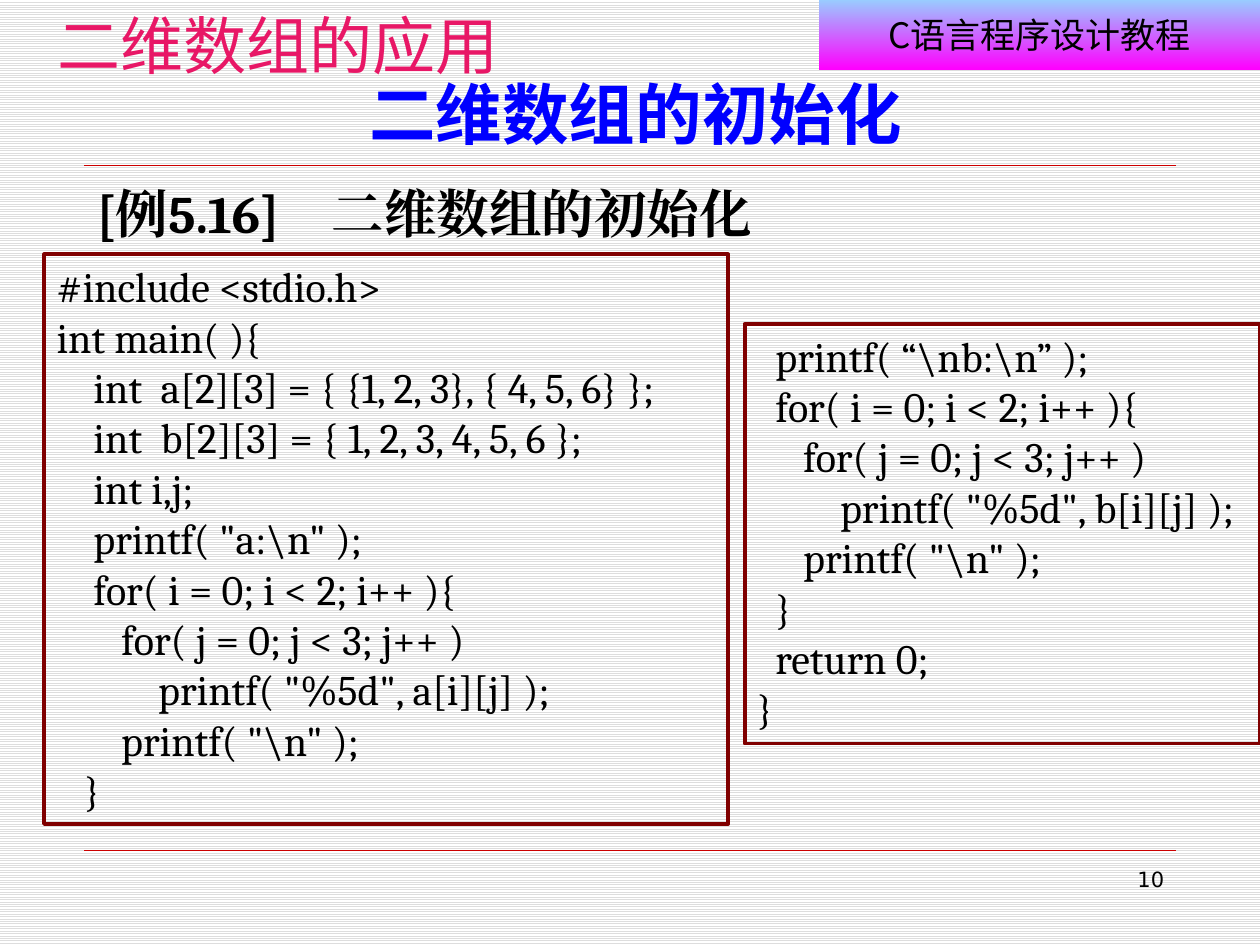
from dataclasses import dataclass

from lxml import etree
from pptx import Presentation
from pptx import util as u
from pptx.dml import color
from pptx.enum import dml, shapes, text
from pptx.oxml import ns


@dataclass(frozen=True)
class Area:
    left: float
    top: float
    width: float
    height: float

    def lengths(self) -> tuple:
        return tuple(u.Cm(n) for n in (self.left, self.top, self.width, self.height))


@dataclass(frozen=True)
class Style:
    font: str
    size: float
    color: str = "000000"
    bold: bool = False
    align: text.PP_ALIGN = text.PP_ALIGN.LEFT
    anchor: text.MSO_ANCHOR = text.MSO_ANCHOR.TOP
    wrap: bool = True


@dataclass(frozen=True)
class Listing:
    area: Area
    code: str


CODE_STYLE = Style("Cambria", 24)
RULE_TOPS = (3.33, 17.15)

LISTINGS = (
    Listing(Area(15.01, 6.53, 10.39, 8.46), r'''  printf( “\nb:\n” );
  for( i = 0; i < 2; i++ ){
     for( j = 0; j < 3; j++ )
         printf( "%5d", b[i][j] );
     printf( "\n" );
  }
  return 0;
}'''),
    Listing(Area(0.89, 5.13, 13.79, 11.48), r'''#include <stdio.h>
int main( ){
    int  a[2][3] = { {1, 2, 3}, { 4, 5, 6} };
    int  b[2][3] = { 1, 2, 3, 4, 5, 6 };
    int i,j;
    printf( "a:\n" );
    for( i = 0; i < 2; i++ ){
       for( j = 0; j < 3; j++ )
           printf( "%5d", a[i][j] );
       printf( "\n" );
   }'''),
)


def rgb(value: str) -> color.RGBColor:
    return color.RGBColor.from_string(value)


def write(shape, content: str, style: Style) -> None:
    frame = shape.text_frame
    frame.word_wrap = style.wrap
    frame.vertical_anchor = style.anchor
    frame.auto_size = text.MSO_AUTO_SIZE.NONE
    for index, line in enumerate(content.split("\n")):
        paragraph = frame.add_paragraph() if index else frame.paragraphs[0]
        paragraph.alignment = style.align
        run = paragraph.add_run()
        run.text = line
        font = run.font
        font.name = style.font
        font.size = u.Pt(style.size)
        font.bold = style.bold
        font.color.rgb = rgb(style.color)
        east_asian = etree.Element(ns.qn("a:ea"), typeface=style.font)
        run.font.element.find(ns.qn("a:latin")).addnext(east_asian) if hasattr(
            run.font, "element"
        ) else run._r.get_or_add_rPr().append(east_asian)


def add_text(slide, area: Area, content: str, style: Style) -> None:
    write(slide.shapes.add_textbox(*area.lengths()), content, style)


def add_rule(slide, top: float) -> None:
    rule = slide.shapes.add_connector(
        shapes.MSO_CONNECTOR.STRAIGHT, u.Cm(1.7), u.Cm(top), u.Cm(23.7), u.Cm(top)
    )
    rule.line.color.rgb = rgb("CC0000")
    rule.line.width = u.Pt(0.25)
    etree.SubElement(rule._element.spPr, ns.qn("a:effectLst"))


def add_rectangle(slide, area: Area):
    rectangle = slide.shapes.add_shape(shapes.MSO_SHAPE.RECTANGLE, *area.lengths())
    rectangle.shadow.inherit = False
    return rectangle


def add_banner(slide) -> None:
    banner = add_rectangle(slide, Area(16.51, 0, 8.89, 1.4))
    banner.line.fill.background()
    banner.fill.gradient()
    banner.fill.gradient_angle = 270
    for stop, value in zip(banner.fill.gradient_stops, ("99CCFF", "FF00FF")):
        stop.color.rgb = rgb(value)
    write(banner, "C语言程序设计教程", Style(
        "Noto Sans CJK SC", 20, align=text.PP_ALIGN.CENTER, anchor=text.MSO_ANCHOR.MIDDLE
    ))


def add_listing(slide, listing: Listing) -> None:
    frame = add_rectangle(slide, listing.area)
    frame.fill.background()
    frame.line.color.rgb = rgb("800000")
    frame.line.width = u.Pt(2.25)
    write(frame, listing.code, CODE_STYLE)


def main() -> None:
    deck = Presentation()
    deck.slide_width, deck.slide_height = u.Cm(25.4), u.Cm(19.05)
    slide = deck.slides.add_slide(deck.slide_layouts[5])

    backdrop = slide.background.fill
    backdrop.patterned()
    backdrop.pattern = dml.MSO_PATTERN.LIGHT_HORIZONTAL
    backdrop.fore_color.rgb = rgb("DDDDDD")
    backdrop.back_color.rgb = rgb("FFFFFF")

    for top in RULE_TOPS:
        add_rule(slide, top)
    add_banner(slide)
    add_text(slide, Area(0.51, 0, 10.21, 1.04), "二维数组的应用", Style(
        "Noto Sans CJK JP", 36, "E81766", align=text.PP_ALIGN.CENTER, wrap=False
    ))

    title = slide.shapes.title
    title.left, title.top, title.width, title.height = Area(1.7, 1.32, 22.23, 1.88).lengths()
    write(title, "二维数组的初始化", Style(
        "DejaVu Sans", 38, "0000FF", True, text.PP_ALIGN.CENTER, text.MSO_ANCHOR.BOTTOM
    ))

    add_text(slide, Area(1.7, 3.53, 22.2, 1.8), "[例5.16]　二维数组的初始化",
             Style("Cambria", 30, bold=True))
    add_text(slide, Area(18.21, 17.35, 5.51, 1.32), "10",
             Style("DejaVu Sans", 12, align=text.PP_ALIGN.RIGHT))
    for listing in LISTINGS:
        add_listing(slide, listing)

    deck.save("out.pptx")


if __name__ == "__main__":
    main()
